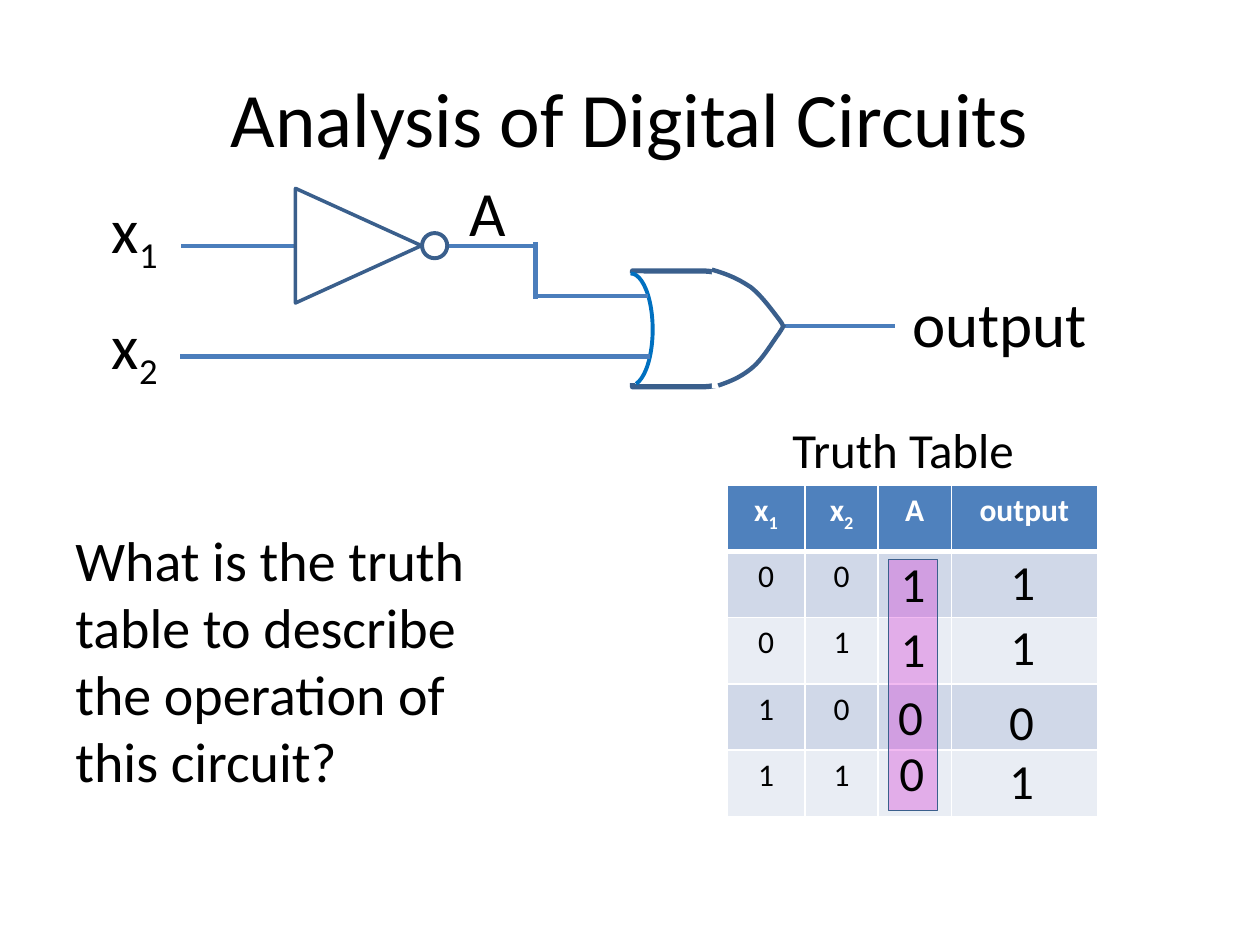
from dataclasses import dataclass

from lxml.etree import SubElement
from pptx import Presentation
from pptx.dml.color import RGBColor
from pptx.enum.shapes import MSO_CONNECTOR, MSO_SHAPE
from pptx.enum.text import MSO_ANCHOR, PP_ALIGN
from pptx.oxml.ns import qn
from pptx.util import Inches, Pt


@dataclass(frozen=True)
class Theme:
    """Colours, font and type sizes of the slide."""
    font: str = "Calibri"
    ink: str = "000000"
    white: str = "FFFFFF"
    wire: str = "4B7EBC"
    outline: str = "3A5F8C"
    gate_back: str = "0070C0"
    header: str = "4F81BD"
    bands: tuple = ("D0D8E8", "E9EDF4")
    highlight: str = "D51BD1"
    title_size: int = 44
    label_size: int = 36
    body_size: int = 32
    value_size: int = 28
    cell_size: int = 18
    wire_width: float = 2.5
    header_rule: float = 3


THEME = Theme()


def color(value):
    """Turn a hex string into a colour."""
    return RGBColor.from_string(value)


def write(para, text, size, subscript="", ink=THEME.ink, bold=False):
    """Write text and an optional subscript into a paragraph."""
    para.text = text
    if subscript:
        span = para.add_run()
        span.text = subscript
        span._r.get_or_add_rPr().set("baseline", "-25000")
    for span in para.runs:
        span.font.name = THEME.font
        span.font.size = Pt(size)
        span.font.bold = bold
        span.font.color.rgb = color(ink)


def add_text(page, frame, text, size, subscript=""):
    """Add a wrapping text box and return it."""
    box = page.shapes.add_textbox(*map(Inches, frame))
    box.text_frame.word_wrap = True
    write(box.text_frame.paragraphs[0], text, size, subscript)
    return box


def add_wire(page, start, end):
    """Add a straight wire between two points."""
    wire = page.shapes.add_connector(MSO_CONNECTOR.STRAIGHT, *map(Inches, start + end))
    wire.line.color.rgb = color(THEME.wire)
    wire.line.width = Pt(THEME.wire_width)
    SubElement(wire._element.spPr, qn("a:effectLst"))


def style_shape(shape, fill=None, line=None, width=1):
    """Give a shape its fill and line, without shadow."""
    shape.shadow.inherit = False
    if fill:
        shape.fill.solid()
        shape.fill.fore_color.rgb = color(fill)
    else:
        shape.fill.background()
    if line:
        shape.line.color.rgb = color(line)
        shape.line.width = Pt(width)
    else:
        shape.line.fill.background()


def add_shape(page, kind, frame, fill=None, line=None, width=1):
    """Add a styled preset shape and return it."""
    shape = page.shapes.add_shape(kind, *map(Inches, frame))
    style_shape(shape, fill, line, width)
    return shape


def bezier(points, steps=10):
    """Return points along a cubic curve, without its start."""
    curve = []
    for step in range(1, steps + 1):
        t = step / steps
        weights = ((1 - t) ** 3, 3 * t * (1 - t) ** 2, 3 * t * t * (1 - t), t ** 3)
        curve.append(tuple(sum(w * p[axis] for w, p in zip(weights, points)) for axis in (0, 1)))
    return curve


def add_curve(page, points):
    """Add an open outline through chained cubic curves."""
    track = [points[0]]
    for first in range(0, len(points) - 1, 3):
        track += bezier(points[first:first + 4])
    start, *vertices = [(Inches(x), Inches(y)) for x, y in track]
    builder = page.shapes.build_freeform(*start)
    builder.add_line_segments(vertices, close=False)
    style_shape(builder.convert_to_shape(), line=THEME.outline, width=THEME.wire_width)


def add_inverter(page):
    """Draw the NOT gate with its wires."""
    add_wire(page, (1.44, 1.95), (2.34, 1.95))
    add_wire(page, (3.33, 1.95), (4.23, 1.95))
    triangle = add_shape(page, MSO_SHAPE.ISOSCELES_TRIANGLE, (2.39, 1.45, 0.91, 1),
                         line=THEME.outline, width=2)
    triangle.rotation = 90
    add_shape(page, MSO_SHAPE.OVAL, (3.35, 1.85, 0.2, 0.2), THEME.white, THEME.outline, 2.25)


def add_or_gate(page):
    """Draw the OR gate with its wires."""
    add_wire(page, (6.2, 2.59), (7.1, 2.59))
    add_shape(page, MSO_SHAPE.FLOWCHART_DELAY, (5.02, 2.15, 1.08, 0.92),
              line=THEME.outline, width=3)
    add_shape(page, MSO_SHAPE.RECTANGLE, (4.95, 2.17, 0.16, 0.87), THEME.white)
    back = add_shape(page, MSO_SHAPE.ARC, (4.83, 2.17, 0.35, 0.89),
                     line=THEME.gate_back, width=2.25)
    back.adjustments[0], back.adjustments[1] = 162, 50.54
    add_wire(page, (4.24, 2.35), (5.14, 2.35))
    add_wire(page, (1.43, 2.83), (5.16, 2.83))
    add_shape(page, MSO_SHAPE.RECTANGLE, (5.65, 2.14, 0.5, 0.94), THEME.white)
    add_curve(page, [(5.65, 2.14), (5.79, 2.18), (5.87, 2.22), (5.96, 2.28), (6.05, 2.35),
                     (6.14, 2.48), (6.18, 2.53), (6.22, 2.58), (6.21, 2.59), (6.22, 2.59)])
    add_curve(page, [(5.7, 3.06), (5.82, 3.02), (5.9, 2.98), (5.98, 2.91), (6.06, 2.84),
                     (6.14, 2.7), (6.18, 2.65), (6.22, 2.59), (6.22, 2.58), (6.22, 2.58)])
    add_wire(page, (4.25, 2.37), (4.25, 1.92))


def add_bottom_rule(cell):
    """Draw the thick white rule under a header cell."""
    properties = cell._tc.get_or_add_tcPr()
    rule = SubElement(properties, qn("a:lnB"), w=str(Pt(THEME.header_rule)))
    SubElement(SubElement(rule, qn("a:solidFill")), qn("a:srgbClr"), val=THEME.white)
    properties.insert(0, rule)


def add_truth_table(page):
    """Add the table of inputs with empty result columns."""
    headers = [("x", "1"), ("x", "2"), ("A", ""), ("output", "")]
    inputs = [(first, second) for first in "01" for second in "01"]
    rows = [headers] + [[(a, ""), (b, ""), ("", ""), ("", "")] for a, b in inputs]
    frame = map(Inches, (5.77, 3.85, 2.94, 2.63))
    table = page.shapes.add_table(len(rows), len(headers), *frame).table
    for column, width in zip(table.columns, (0.62, 0.58, 0.58, 1.16)):
        column.width = Inches(width)
    for row_index, row in enumerate(rows):
        is_header = row_index == 0
        fill = THEME.header if is_header else THEME.bands[(row_index - 1) % 2]
        ink = THEME.white if is_header else THEME.ink
        for column_index, (text, subscript) in enumerate(row):
            cell = table.cell(row_index, column_index)
            cell.fill.solid()
            cell.fill.fore_color.rgb = color(fill)
            if is_header:
                add_bottom_rule(cell)
            if text:
                para = cell.text_frame.paragraphs[0]
                para.alignment = PP_ALIGN.CENTER
                write(para, text, THEME.cell_size, subscript, ink, is_header)


def add_answers(page):
    """Lay the highlight and the result digits over the table."""
    band = add_shape(page, MSO_SHAPE.RECTANGLE, (7.05, 4.44, 0.39, 1.99),
                     THEME.highlight, THEME.outline, 0.25)
    fill_color = band._element.spPr.find(qn("a:solidFill"))[0]
    SubElement(fill_color, qn("a:alpha")).set("val", "30000")
    answers = [("1", 7.05, 4.34), ("1", 7.05, 4.86), ("0", 7.03, 5.4), ("0", 7.04, 5.84),
               ("1", 7.92, 4.33), ("1", 7.92, 4.84), ("0", 7.91, 5.44), ("1", 7.91, 5.91)]
    for digit, left, top in answers:
        add_text(page, (left, top, 0.48, 0.57), digit, THEME.value_size)


def main():
    """Build the slide and save it."""
    deck = Presentation()
    deck.slide_width, deck.slide_height = Inches(10), Inches(7.5)
    page = deck.slides.add_slide(deck.slide_layouts[6])
    title = add_text(page, (0.5, 0.3, 9, 1.25), "Analysis of Digital Circuits", THEME.title_size)
    title.text_frame.vertical_anchor = MSO_ANCHOR.MIDDLE
    title.text_frame.paragraphs[0].alignment = PP_ALIGN.CENTER
    question = add_text(page, (0.5, 4.12, 3.73, 2.63),
                        "What is the truth table to describe the operation of this circuit?",
                        THEME.body_size)
    question.text_frame.paragraphs[0].space_before = Pt(6.4)
    add_inverter(page)
    add_or_gate(page)
    for text, subscript, left, top, width in [("x", "1", 0.79, 1.46, 0.77),
                                              ("x", "2", 0.79, 2.38, 0.77),
                                              ("A", "", 3.63, 1.33, 0.77),
                                              ("output", "", 7.14, 2.21, 1.95)]:
        add_text(page, (left, top, width, 0.71), text, THEME.label_size, subscript)
    add_text(page, (6.19, 3.28, 2.06, 0.57), "Truth Table", THEME.value_size)
    add_truth_table(page)
    add_answers(page)
    deck.save("out.pptx")


if __name__ == "__main__":
    main()
